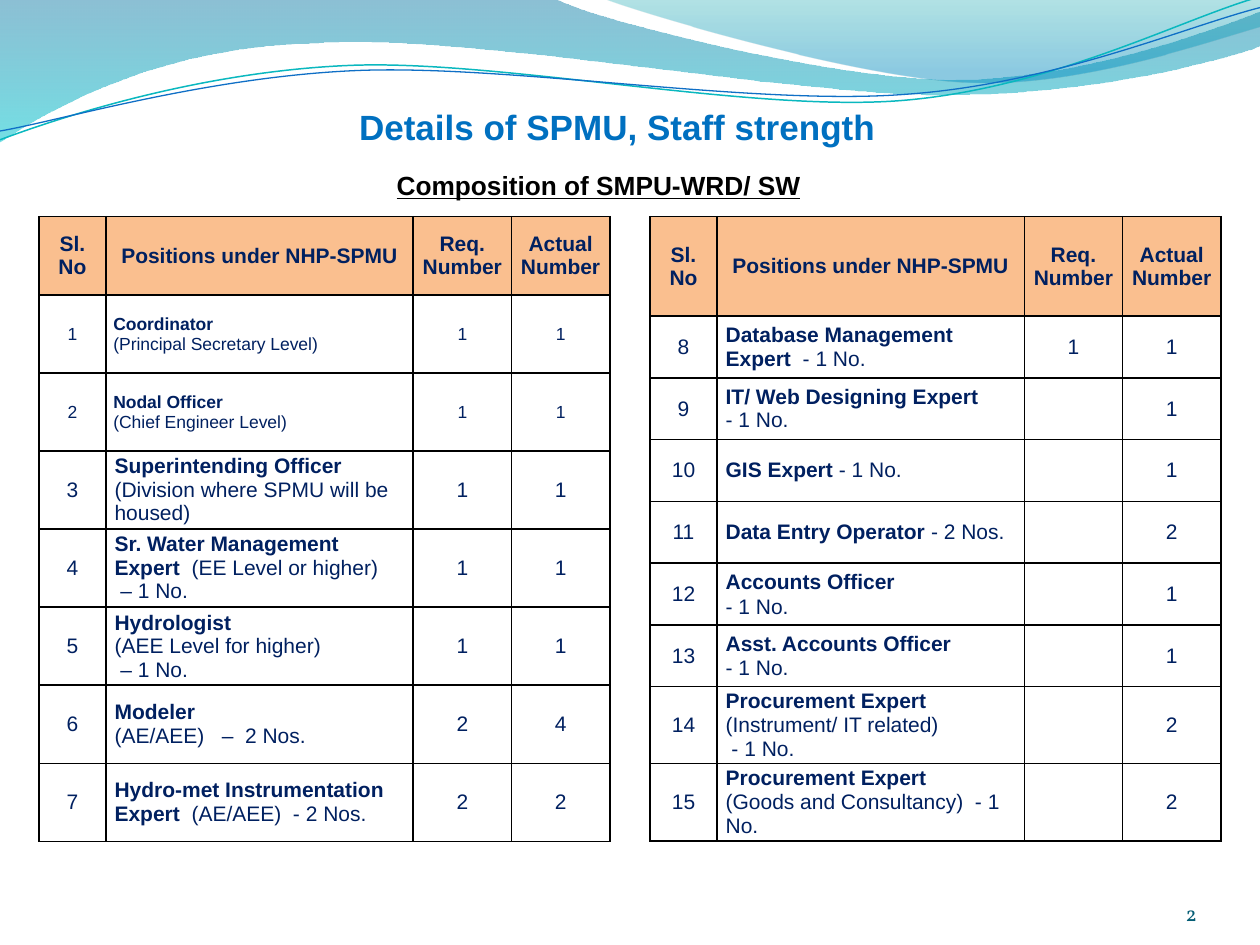
from dataclasses import dataclass
from math import cos, radians, sin

from lxml import etree
from pptx import Presentation, util as u
from pptx.dml.color import RGBColor
from pptx.enum import text
from pptx.oxml.ns import qn


# Colours and type sizes
@dataclass(frozen=True)
class Theme:
    font: str = "Arial"
    serif: str = "Vollkorn"
    navy: str = "002060"
    blue: str = "0070C0"
    teal: str = "045D75"
    black: str = "000000"
    head: str = "FABF8F"
    deep: tuple = ((0, "0074A1", 45), (1, "00C6CF", 55))
    pale: tuple = ((0, "00A1A9", 30), (0.8, "008BBF", 45))
    aqua: str = "0AB8BF"
    azure: str = "0F6FC6"
    title: int = 20
    sub: int = 15
    body: int = 12
    small: int = 10


LEFT, MID, RIGHT = text.PP_ALIGN.LEFT, text.PP_ALIGN.CENTER, text.PP_ALIGN.RIGHT
TOP, CENTRE, BASE = (text.MSO_ANCHOR.TOP, text.MSO_ANCHOR.MIDDLE,
                     text.MSO_ANCHOR.BOTTOM)


def write(frame, words, size, color, font=Theme.font, bold=False, under=None,
          align=LEFT, space=None):
    """One paragraph per line; what stands before a bar is bold."""
    for i, row in enumerate(words.split("\n")):
        para = frame.paragraphs[0] if i == 0 else frame.add_paragraph()
        para.alignment, para.line_spacing = align, space
        strong, _, plain = row.rpartition("|")
        for part, heavy in ((strong, True), (plain, bold)):
            if part:
                run = para.add_run()
                run.text = part
                run.font.name, run.font.size = font, u.Pt(size)
                run.font.bold, run.font.underline = heavy, under
                run.font.color.rgb = RGBColor.from_string(color)


class Deck:
    def __init__(self, theme):
        self.theme = theme
        self.prs = Presentation()
        self.prs.slide_width, self.prs.slide_height = u.Inches(10), u.Inches(7.5)
        self.slide = self.prs.slides.add_slide(self.prs.slide_layouts[6])

    def wave(self, box, *steps, grad=None, line=None, turn=0):
        """Outline of points (2 numbers) and cubic curves (6 numbers)."""
        ends = [(u.Inches(s[-2]), u.Inches(s[-1])) for s in steps]
        pen = self.slide.shapes.build_freeform(*ends[0], scale=1.0)
        pen.add_line_segments(ends[1:], close=grad is not None)
        shape = pen.convert_to_shape()
        shape.shadow.inherit = False
        self.curve(shape, box, steps, turn)
        if grad:
            shape.line.fill.background()
            self.blend(shape, grad)
        else:
            shape.fill.background()
            shape.line.color.rgb = RGBColor.from_string(line[0])
            shape.line.width = u.Pt(line[1])

    def curve(self, shape, box, steps, turn):
        """Fit the shape to its box and bend its segments."""
        x, y, w, h = box
        shape.left, shape.top, shape.width, shape.height = map(u.Inches, box)
        shape.rotation = -turn % 360
        co, si = cos(radians(turn)), sin(radians(turn))
        track = next(shape._element.iter(qn("a:path")))
        track.set("w", str(u.Inches(w)))
        track.set("h", str(u.Inches(h)))
        for node, step in zip(list(track), steps):
            if len(step) == 6:
                node.tag = qn("a:cubicBezTo")
            for old in list(node):
                node.remove(old)
            for px, py in zip(step[::2], step[1::2]):
                dx, dy = px - x - w / 2, py - y - h / 2
                etree.SubElement(node, qn("a:pt"),
                                 x=str(u.Inches(w / 2 + dx * co - dy * si)),
                                 y=str(u.Inches(h / 2 + dx * si + dy * co)))

    def blend(self, shape, grad):
        """Downward gradient of (place, colour, opacity in percent)."""
        shape.fill.gradient()
        shape.fill.gradient_angle = 270
        for stop, (place, color, _) in zip(shape.fill.gradient_stops, grad):
            stop.position = place
            stop.color.rgb = RGBColor.from_string(color)
        tints = shape._element.spPr.iter(qn("a:srgbClr"))
        for tint, (_, _, alpha) in zip(list(tints), grad):
            etree.SubElement(tint, qn("a:alpha"), val=str(alpha * 1000))

    def label(self, box, words, anchor=TOP, inset=(0, 0, 0, 0), **form):
        frame = self.slide.shapes.add_textbox(*map(u.Inches, box)).text_frame
        frame.word_wrap, frame.vertical_anchor = True, anchor
        (frame.margin_left, frame.margin_top, frame.margin_right,
         frame.margin_bottom) = map(u.Inches, inset)
        write(frame, words, **form)

    def edge(self, cell):
        """Thin black rule on all four sides."""
        prop = cell._tc.get_or_add_tcPr()
        for side in ("lnL", "lnR", "lnT", "lnB"):
            rule = etree.SubElement(prop, qn("a:" + side), w=str(u.Pt(1)))
            fill = etree.SubElement(rule, qn("a:solidFill"))
            etree.SubElement(fill, qn("a:srgbClr"), val=self.theme.black)

    def cell(self, cell, words, inset, fill=None, **form):
        self.edge(cell)
        cell.vertical_anchor = CENTRE
        cell.margin_left = cell.margin_right = u.Inches(inset)
        cell.margin_top = cell.margin_bottom = 0
        if fill:
            cell.fill.solid()
            cell.fill.fore_color.rgb = RGBColor.from_string(fill)
        else:
            cell.fill.background()
        write(cell.text_frame, words, color=self.theme.navy, **form)

    def table(self, left, top, highs, rows, small=(), loose=None):
        th = self.theme
        wide = (0.53, 2.44, 0.78, 0.78)
        grid = self.slide.shapes.add_table(
            len(highs), len(wide), *map(u.Inches, (left, top, sum(wide), sum(highs)))
        ).table
        grid.first_row = grid.horz_banding = False
        for col, w in zip(grid.columns, wide):
            col.width = u.Inches(w)
        for row, h in zip(grid.rows, highs):
            row.height = u.Inches(h)
        for c, words in enumerate(HEAD):
            self.cell(grid.cell(0, c), words, 0.06, fill=th.head,
                      size=th.body, bold=True, align=MID)
        for r, row in enumerate(rows, 1):
            tiny = row[0] in small
            for c, words in enumerate(row):
                self.cell(grid.cell(r, c), words, 0.06 if tiny else 0.07,
                          size=th.small if tiny else th.body,
                          align=LEFT if c == 1 else MID,
                          space=(loose or {}).get(row[0]))


HEAD = ("Sl.\nNo", "Positions under NHP-SPMU", "Req.\nNumber", "Actual Number")
FIRST = (
    ("1", "Coordinator|\n(Principal Secretary Level)", "1", "1"),
    ("2", "Nodal Officer|\n(Chief Engineer Level)", "1", "1"),
    ("3", "Superintending Officer|\n(Division where SPMU will be housed)", "1", "1"),
    ("4", "Sr. Water Management Expert  |(EE Level or higher)\n – 1 No.", "1", "1"),
    ("5", "Hydrologist|\n(AEE Level for higher)\n – 1 No.", "1", "1"),
    ("6", "Modeler|\n(AE/AEE)   –  2 Nos.", "2", "4"),
    ("7", "Hydro-met Instrumentation Expert  |(AE/AEE)  - 2 Nos.", "2", "2"),
)
SECOND = (
    ("8", "Database Management Expert  |- 1 No.", "1", "1"),
    ("9", "IT/ Web Designing Expert|\n- 1 No.", "", "1"),
    ("10", "GIS Expert |- 1 No.", "", "1"),
    ("11", "Data Entry Operator |- 2 Nos.", "", "2"),
    ("12", "Accounts Officer|\n- 1 No.", "", "1"),
    ("13", "Asst. Accounts Officer|\n- 1 No.", "", "1"),
    ("14", "Procurement Expert|\n(Instrument/ IT related)\n - 1 No.", "", "2"),
    ("15", "Procurement Expert|\n(Goods and Consultancy)  - 1 No.", "", "2"),
)


def main():
    th = Theme()
    deck = Deck(th)

    # Waves along the top
    deck.wave((-0.01, -0.01, 10.02, 1.14), (0, 0), (4.4, -0.01),
              (4.76, 0.17, 6.64, 0.63, 7.58, 0.63),
              (8.53, 0.63, 9.58, 0.26, 10, 0.09), (10.01, 0.36),
              (9.83, 0.44, 8.7, 0.76, 7.46, 0.75),
              (6.22, 0.75, 3.82, 0.28, 2.57, 0.34),
              (1.29, 0.36, 0.46, 0.83, -0.01, 1.13), (0, 0), grad=th.deep)
    deck.wave((4.79, -0.01, 5.21, 0.7), (4.79, -0.01),
              (5.09, 0.11, 6.82, 0.62, 7.69, 0.65),
              (8.56, 0.69, 9.61, 0.32, 10, 0.21), (10, 0), (4.79, -0.01),
              grad=th.pale)
    deck.wave((-0.02, 0.22, 10.02, 0.71), (0, 1.11),
              (0.48, 0.93, 1.58, 0.57, 2.77, 0.52),
              (3.95, 0.47, 5.93, 0.89, 7.13, 0.8),
              (8.33, 0.71, 9.38, 0.15, 9.98, -0.02), line=(th.aqua, 0.85), turn=2.7)
    deck.wave((-0.02, 0.3, 10.03, 0.58), (0, 1.04),
              (0.47, 0.96, 1.64, 0.61, 2.83, 0.56),
              (4.03, 0.51, 5.97, 0.84, 7.17, 0.75),
              (8.36, 0.67, 9.41, 0.21, 10, 0.06), line=(th.azure, 0.75), turn=2.7)

    # Page number, then title and tables
    deck.label((8.67, 6.95, 0.83, 0.4), "2", anchor=BASE, size=th.body,
               color=th.teal, font=th.serif, align=RIGHT)
    deck.table(0.31, 1.72, [0.62] * 8, FIRST, small=("1", "2"),
               loose={"1": 1.05, "2": 1.05})
    deck.label((2.85, 0.78, 4.3, 0.39), "Details of SPMU, Staff strength",
               anchor=BASE, inset=(0, 0.05, 0, 0), size=th.title,
               color=th.blue, bold=True)
    deck.table(5.16, 1.72, [0.79] + [0.49] * 6 + [0.61] * 2, SECOND,
               loose={"12": 1.05, "13": 1.05, "14": 1.02, "15": 1.02})
    deck.label((3.05, 1.17, 3.91, 0.48), "Composition of SMPU-WRD/ SW",
               inset=(0.1, 0.05, 0.1, 0.05), size=th.sub, color=th.black,
               bold=True, under=True, space=1.5)

    deck.prs.save("out.pptx")


if __name__ == "__main__":
    main()
